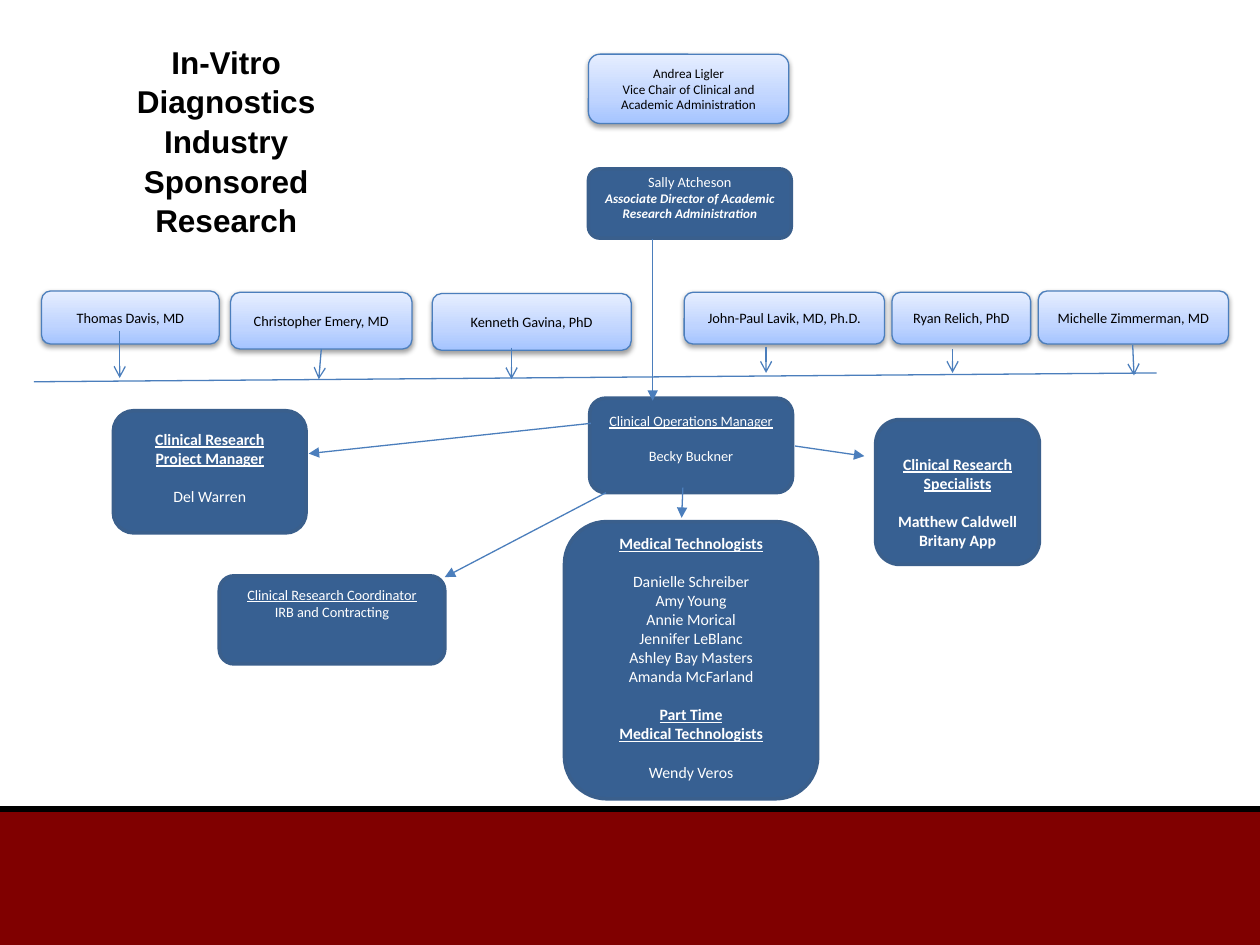
from lxml import etree
from pptx import Presentation
from pptx import util as u
from pptx.dml.color import RGBColor
from pptx.enum import shapes, text
from pptx.oxml import parse_xml
from pptx.oxml.ns import nsdecls, qn

GRAD = f"""<a:gradFill {nsdecls('a')} rotWithShape="1"><a:gsLst>
<a:gs pos="0"><a:srgbClr val="A4C4FF"/></a:gs>
<a:gs pos="35000"><a:srgbClr val="BFD4FF"/></a:gs>
<a:gs pos="100000"><a:srgbClr val="E6EEFF"/></a:gs>
</a:gsLst><a:lin ang="16200000" scaled="1"/></a:gradFill>"""
SHADE = f"""<a:outerShdw {nsdecls('a')} blurRad="39370" dist="20320" dir="5400000"
rotWithShape="0"><a:srgbClr val="000000"><a:alpha val="38000"/></a:srgbClr></a:outerShdw>"""


def tint(code):
    return RGBColor.from_string(code)


class Chart:
    """Style and current slide of the organisation chart."""
    face = "Calibri"
    navy, edge, blue = "376092", "3A5F8C", "4B7EBC"
    black, white, red = "000000", "FFFFFF", "800000"

    def __init__(self, deck):
        self.slide = deck.slides.add_slide(deck.slide_layouts[5])

    def shape(self, kind, at, fill, line, width):
        item = self.slide.shapes.add_shape(kind, *map(u.Inches, at))
        item.shadow.inherit = False
        item.fill.solid()
        item.fill.fore_color.rgb = tint(fill)
        item.line.color.rgb = tint(line)
        item.line.width = u.Pt(width)
        return item

    def title(self, words, at):
        item = self.slide.shapes.title
        item.left, item.top, item.width, item.height = map(u.Inches, at)
        frame = item.text_frame
        frame.word_wrap = True
        frame.auto_size = text.MSO_AUTO_SIZE.NONE
        frame.vertical_anchor = text.MSO_ANCHOR.MIDDLE
        frame.text = words
        para = frame.paragraphs[0]
        para.line_spacing = 1.05
        self.font(para, 18, self.black, "b", "Arial")

    def font(self, para, size, color, marks="", face=face):
        """Centre a paragraph; marks may hold b, i and u."""
        para.alignment = text.PP_ALIGN.CENTER
        font = para.font
        font.name, font.size = face, u.Pt(size)
        font.color.rgb = tint(color)
        font.bold, font.italic = "b" in marks, "i" in marks
        font.underline = "u" in marks

    def fill(self, item, rows, color, size):
        """Write rows of (words, marks[, size]); the mark + leaves a line free above."""
        for i, (words, marks, *own) in enumerate(rows):
            frame = item.text_frame
            para = frame.add_paragraph() if i else frame.paragraphs[0]
            para.text = words
            if "+" in marks:
                para.space_before = u.Pt(round(size * 1.22))
            self.font(para, own[0] if own else size, color, marks)

    def light(self, at, lines, size=8.2):
        item = self.shape(shapes.MSO_SHAPE.ROUNDED_RECTANGLE, at,
                          self.white, self.blue, 0.75)
        props = item.element.spPr
        props.replace(props.find(qn("a:solidFill")), parse_xml(GRAD))
        props.find(qn("a:effectLst")).append(parse_xml(SHADE))
        item.text_frame.word_wrap = True
        item.text_frame.vertical_anchor = text.MSO_ANCHOR.MIDDLE
        self.fill(item, [(line, "") for line in lines], self.black, size)

    def dark(self, at, rows, size, top, side=0.1):
        item = self.shape(shapes.MSO_SHAPE.ROUNDED_RECTANGLE, at,
                          self.navy, self.edge, 2)
        frame = item.text_frame
        frame.word_wrap = True
        frame.vertical_anchor = text.MSO_ANCHOR.TOP
        # Rounded corners already push the text in by 0.29 of the radius
        inset = 0.29 * 0.1667 * min(at[2:])
        frame.margin_top = u.Inches(max(top - inset, 0))
        frame.margin_bottom = 0
        frame.margin_left = frame.margin_right = u.Inches(side)
        self.fill(item, rows, self.white, size)

    def line(self, ends, head=None, color=blue, width=0.75):
        item = self.slide.shapes.add_connector(
            shapes.MSO_CONNECTOR.STRAIGHT, *map(u.Inches, ends))
        item.line.color.rgb = tint(color)
        item.line.width = u.Pt(width)
        props = item.element.spPr
        if head:
            etree.SubElement(props.find(qn("a:ln")), qn("a:tailEnd"), type=head)
        etree.SubElement(props, qn("a:effectLst"))


def main():
    deck = Presentation()
    deck.slide_width, deck.slide_height = u.Inches(10), u.Inches(7.5)
    org = Chart(deck)
    org.shape(shapes.MSO_SHAPE.RECTANGLE, (0, 6.42, 10, 1.08), org.red, org.red, 2)
    org.line((0, 6.42, 10, 6.42), color=org.black, width=3)
    org.title("In-Vitro Diagnostics Industry Sponsored Research", (0.57, 0.3, 2.45, 1.62))

    org.light((4.67, 0.43, 1.59, 0.55),
              ["Andrea Ligler", "Vice Chair of Clinical and Academic Administration"], 7.5)
    org.dark((4.67, 1.34, 1.61, 0.55),
             [("Sally Atcheson", ""),
              ("Associate Director of Academic Research Administration", "bi", 7.5)],
             8.2, 0.03, 0.05)

    doctors = [
        ("Thomas Davis, MD", 0.33, 2.31, 1.41, 0.42),
        ("Christopher Emery, MD", 1.83, 2.32, 1.44, 0.45),
        ("Kenneth Gavina, PhD", 3.43, 2.33, 1.58, 0.45),
        ("John-Paul Lavik, MD, Ph.D.", 5.43, 2.32, 1.59, 0.41),
        ("Ryan Relich, PhD", 7.08, 2.32, 1.1, 0.41),
        ("Michelle Zimmerman, MD", 8.24, 2.31, 1.51, 0.42),
    ]
    for name, *at in doctors:
        org.light(at, [name])

    org.dark((4.68, 3.16, 1.61, 0.75),
             [("Clinical Operations Manager", "u"), ("Becky Buckner", "+")], 8.2, 0.11)
    org.dark((0.9, 3.26, 1.53, 0.97),
             [("Clinical Research Project Manager", "bu"), ("Del Warren", "+")], 9, 0.15)
    org.dark((1.74, 4.57, 1.79, 0.7),
             [("Clinical Research Coordinator", "u"), ("IRB and Contracting", "")], 8.2, 0.08)
    staff = ["Amy Young", "Annie Morical", "Jennifer LeBlanc",
             "Ashley Bay Masters", "Amanda McFarland"]
    org.dark((4.48, 4.14, 2.01, 2.2),
             [("Medical Technologists", "bu"), ("Danielle Schreiber", "+"),
              *[(name, "") for name in staff],
              ("Part Time", "bu+"), ("Medical Technologists", "bu"),
              ("Wendy Veros", "+")], 9, 0.07)
    org.dark((6.95, 3.33, 1.3, 1.15),
             [("Clinical Research Specialists", "bu"), ("Matthew Caldwell", "b+"),
              ("Britany App", "b")], 9, 0.28)

    org.line((0.27, 3.03, 9.18, 2.96))
    drops = [(0.95, 2.63, 0.95, 3), (2.55, 2.77, 2.53, 3.01), (4.06, 2.76, 4.06, 3.01),
             (6.08, 2.75, 6.08, 2.96), (7.56, 2.77, 7.56, 2.96), (8.99, 2.74, 9, 2.98)]
    reports = [(5.18, 1.9, 5.18, 3.18), (4.69, 3.36, 2.45, 3.6), (4.81, 3.91, 3.53, 4.58),
               (5.42, 3.87, 5.41, 4.11), (6.31, 3.54, 6.86, 3.62)]
    for head, group in (("arrow", drops), ("triangle", reports)):
        for ends in group:
            org.line(ends, head)
    deck.save("out.pptx")


if __name__ == "__main__":
    main()
